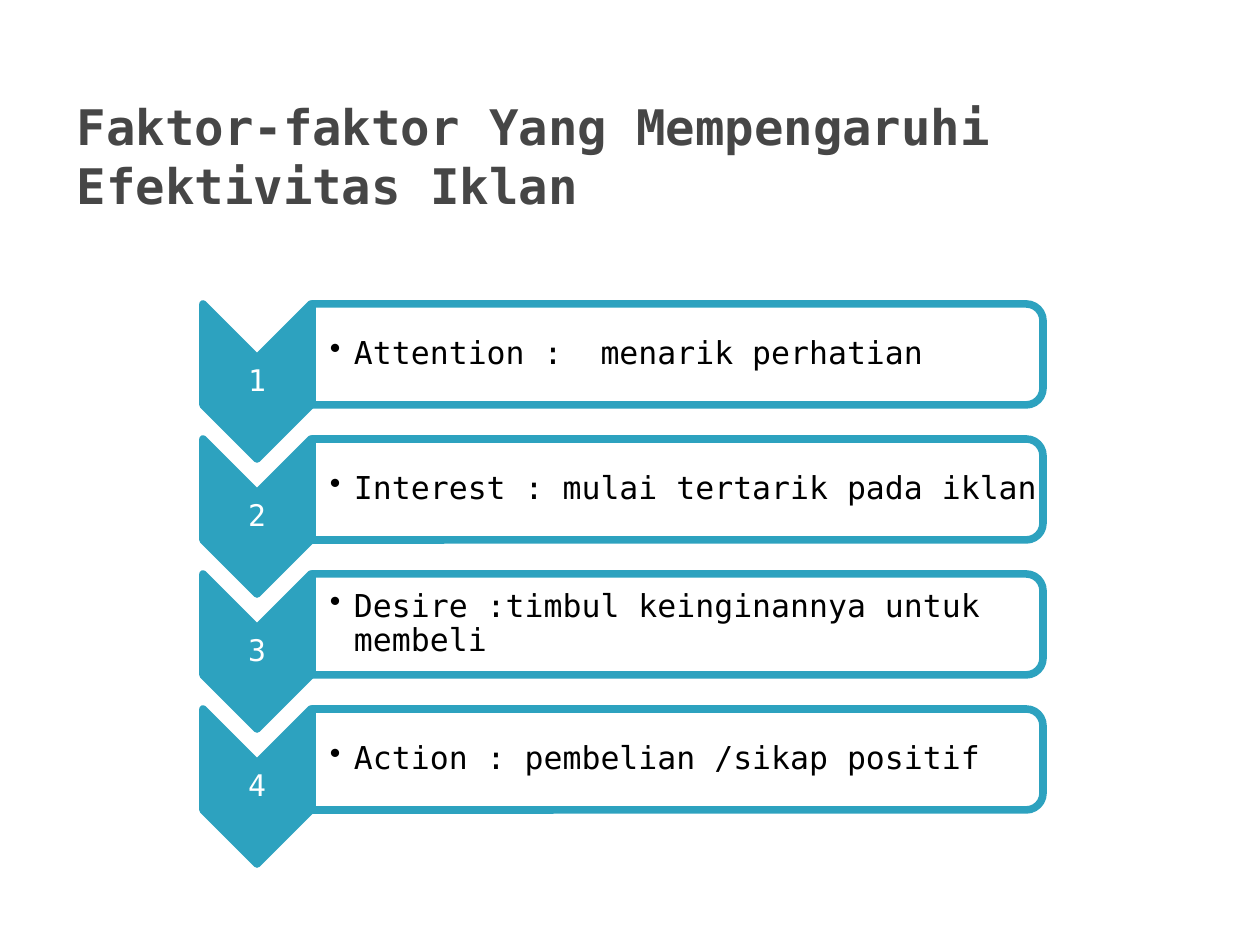
from lxml.etree import SubElement
from pptx import Presentation
from pptx.dml.color import RGBColor
from pptx.enum.shapes import MSO_SHAPE
from pptx.enum.text import MSO_ANCHOR, PP_ALIGN
from pptx.oxml.ns import qn
from pptx.util import Pt

FONT = "DejaVu Sans Mono"
TEAL = "2DA2BF"
STEPS = [
    "Attention :  menarik perhatian",
    "Interest : mulai tertarik pada iklan",
    "Desire :timbul keinginannya untuk membeli",
    "Action : pembelian /sikap positif",
]


def px(n):
    return round(n * 914400 / 126)


def color(value):
    return RGBColor.from_string(value)


def add_text(s, text, box, size, fill, insets, bold=False, bullet=False, **formats):
    tf = s.shapes.add_textbox(*map(px, box)).text_frame
    margins = dict(zip(("left", "top", "right", "bottom"), insets))
    for side, value in margins.items():
        setattr(tf, f"margin_{side}", px(value))
    tf.word_wrap = True
    tf.vertical_anchor = MSO_ANCHOR.MIDDLE
    p = tf.paragraphs[0]
    for name, value in formats.items():
        setattr(p, name, value)
    if bullet:
        pPr = p._p.get_or_add_pPr()
        pPr.set("marL", str(px(24)))
        pPr.set("indent", str(px(-24)))
        SubElement(pPr, qn("a:buChar"), char="•")
    r = p.add_run()
    r.text = text
    font = {"name": FONT, "size": Pt(size), "bold": bold}
    for name, value in font.items():
        setattr(r.font, name, value)
    r.font.color.rgb = color(fill)


def add_turned_shape(s, kind, box, fill):
    x, y, w, h = box
    sp = s.shapes.add_shape(
        kind, px(x + (w - h) / 2), px(y + (h - w) / 2), px(h), px(w)
    )
    sp.rotation = 90
    sp.shadow.inherit = False
    sp.fill.solid()
    sp.fill.fore_color.rgb = color(fill)
    sp.line.color.rgb = color(TEAL)
    sp.line.width = Pt(4.33)
    return sp


def add_title(s, box):
    add_text(s, "Faktor-faktor Yang Mempengaruhi Efektivitas Iklan",
             box, 28, "464646", (13, 6, 13, 6), bold=True)


def add_step(s, number, text, box):
    x, y, w, h = box
    arrow_w, bar_h = 108, 101
    add_turned_shape(s, MSO_SHAPE.CHEVRON, (x, y, arrow_w, h), TEAL)
    add_text(s, str(number), (x, y + 54, arrow_w, 47), 17, "FFFFFF",
             (1, 1, 1, 1), alignment=PP_ALIGN.CENTER, line_spacing=0.9)
    bar_x, bar_w = x + arrow_w + 1, w - arrow_w - 1
    bar = add_turned_shape(
        s, MSO_SHAPE.ROUND_2_SAME_RECTANGLE, (bar_x, y, bar_w, bar_h), "FFFFFF"
    )
    fill = bar.fill._xPr.find(qn("a:solidFill"))
    SubElement(fill[0], qn("a:alpha"), val="90000")
    add_text(s, text, (bar_x, y + 5, bar_w - 3, bar_h - 10), 18, "000000",
             (18, 1, 1, 1), bullet=True, line_spacing=0.9)


def add_steps(s, box):
    x, y, w, h = box
    step_h = 155
    pitch = (h - step_h) / (len(STEPS) - 1)
    for i, text in enumerate(STEPS):
        add_step(s, i + 1, text, (x, y + i * pitch, w, step_h))


def main():
    prs = Presentation()
    prs.slide_width, prs.slide_height = px(1260), px(945)
    s = prs.slides.add_slide(prs.slide_layouts[6])
    add_title(s, (64, 76, 1134, 158))
    add_steps(s, (203, 304, 840, 560))
    prs.save("out.pptx")


if __name__ == "__main__":
    main()
